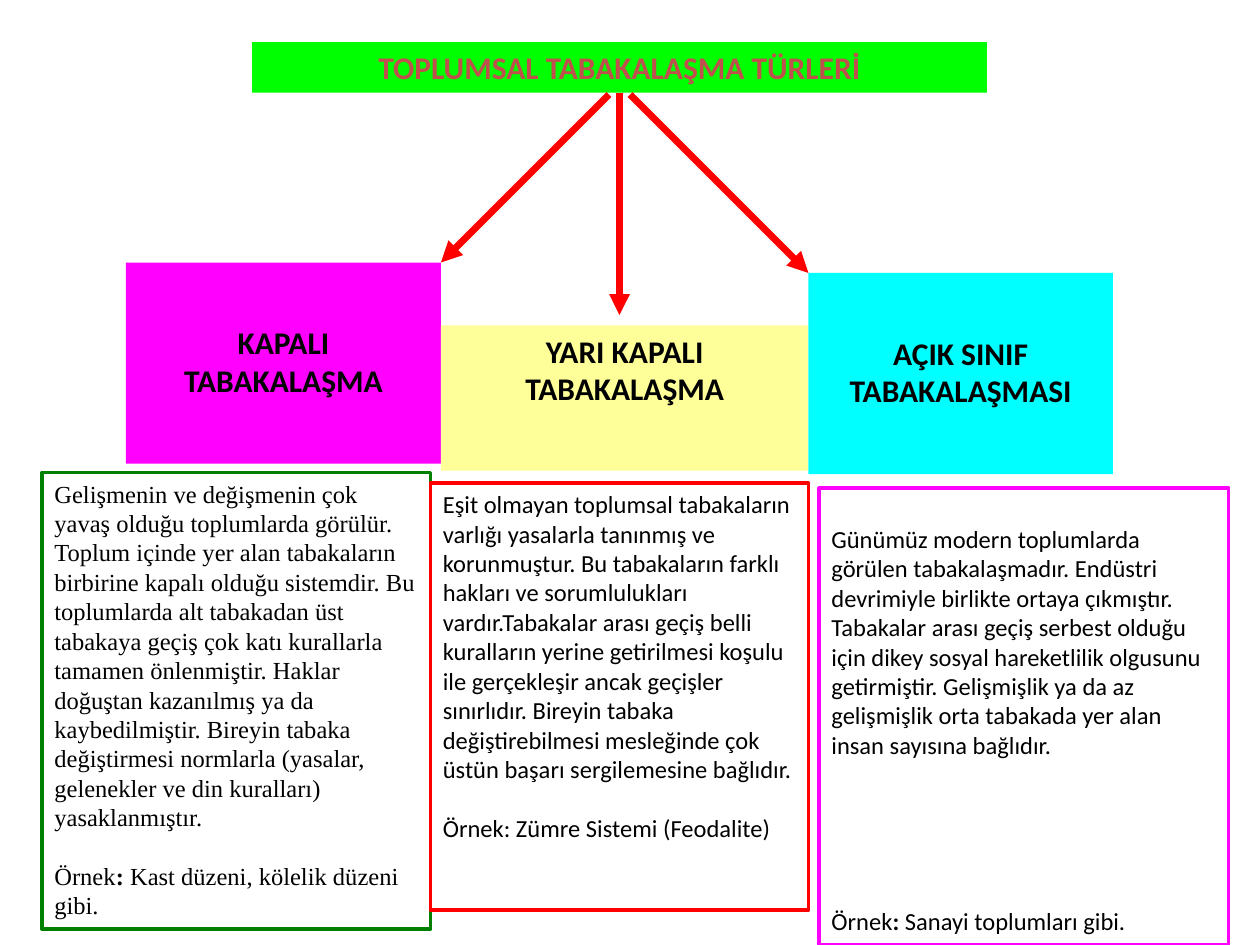
"""Builds a slide on the three types of social stratification."""
from lxml import etree
from pptx import Presentation
from pptx.dml.color import RGBColor
from pptx.enum import shapes, text
from pptx.oxml.ns import qn
from pptx.util import Pt


def color(code):
    return RGBColor.from_string(code)


def place(box, spot, top=3.6):
    box.left, box.top, box.width, box.height = [Pt(n) for n in spot]
    frame = box.text_frame
    frame.word_wrap = True
    frame.auto_size = text.MSO_AUTO_SIZE.NONE
    frame.vertical_anchor = text.MSO_ANCHOR.TOP
    frame.margin_left = frame.margin_right = Pt(7.2)
    frame.margin_top, frame.margin_bottom = Pt(top), Pt(3.6)
    return frame


deck = Presentation()
deck.slide_width, deck.slide_height = Pt(720), Pt(540)
slide = deck.slides.add_slide(deck.slide_layouts[5])
items = slide.shapes

title = items.title
title.fill.solid()
title.fill.fore_color.rgb = color("00FF00")
para = place(title, (144, 24, 420, 29)).paragraphs[0]
para.text = "TOPLUMSAL TABAKALAŞMA TÜRLERİ"
para.alignment = text.PP_ALIGN.CENTER
para.font.size, para.font.bold, para.font.name = Pt(18), True, "Calibri"
para.font.color.rgb = color("C0504D")

kinds = [
    ("KAPALI TABAKALAŞMA", (72, 150, 180, 115), 34.6, "FF00FF"),
    ("YARI KAPALI TABAKALAŞMA", (252, 186, 210, 83), 3.6, "FFFF99"),
    ("AÇIK SINIF TABAKALAŞMASI", (462, 156, 174, 115), 34.6, "00FFFF"),
]
for name, spot, top, fill in kinds:
    box = items.add_shape(shapes.MSO_SHAPE.RECTANGLE, 0, 0, 0, 0)
    box.shadow.inherit = False
    box.fill.solid()
    box.fill.fore_color.rgb = color(fill)
    box.line.fill.background()
    para = place(box, spot, top).paragraphs[0]
    para.text = name
    para.alignment = text.PP_ALIGN.CENTER
    para.font.size, para.font.bold, para.font.name = Pt(18), True, "Calibri"
    para.font.color.rgb = color("000000")

for start, end in [((348, 54), (252, 150)), ((360, 54), (462, 156)),
                   ((354, 53), (354, 180))]:
    arrow = items.add_connector(shapes.MSO_CONNECTOR.STRAIGHT,
                                *[Pt(n) for n in start + end])
    if start[0] == end[0]:
        arrow.begin_connect(title, 2)
    arrow.line.color.rgb = color("FF0000")
    arrow.line.width = Pt(4)
    etree.SubElement(arrow.line._get_or_add_ln(), qn("a:tailEnd"), type="triangle")
    etree.SubElement(arrow._element.spPr, qn("a:effectLst"))

row = 16.8
notes = [
    ((24, 270, 222, 261), 3.6, "008000", "Times New Roman", [
        (0, ["Gelişmenin ve değişmenin çok"]),
        (0, ["yavaş olduğu toplumlarda görülür. Toplum içinde yer alan "
             "tabakaların birbirine kapalı olduğu sistemdir. Bu toplumlarda "
             "alt tabakadan üst tabakaya geçiş çok katı kurallarla tamamen "
             "önlenmiştir. Haklar doğuştan kazanılmış ya da kaybedilmiştir. "
             "Bireyin tabaka değiştirmesi normlarla (yasalar, gelenekler ve "
             "din kuralları) yasaklanmıştır."]),
        (1, ["Örnek", ": ", "Kast düzeni, kölelik düzeni gibi."])]),
    ((246, 276, 216, 244), 3.6, "FF0000", "Calibri", [
        (0, ["Eşit olmayan toplumsal tabakaların varlığı yasalarla tanınmış "
             "ve korunmuştur. Bu tabakaların farklı hakları ve sorumlulukları "
             "vardır.Tabakalar arası geçiş belli kuralların yerine "
             "getirilmesi koşulu ile gerçekleşir ancak geçişler sınırlıdır. "
             "Bireyin tabaka değiştirebilmesi mesleğinde çok üstün başarı "
             "sergilemesine bağlıdır."]),
        (1, ["Örnek: Zümre Sistemi (Feodalite)"])]),
    ((468, 279, 234, 261), 3.6 + row, "FF00FF", "Calibri", [
        (0, ["Günümüz modern toplumlarda görülen tabakalaşmadır. Endüstri "
             "devrimiyle birlikte ortaya çıkmıştır. Tabakalar arası geçiş "
             "serbest olduğu için dikey sosyal hareketlilik olgusunu "
             "getirmiştir. Gelişmişlik ya da az gelişmişlik orta tabakada "
             "yer alan insan sayısına bağlıdır."]),
        (5, ["Örnek", ": ", "Sanayi toplumları gibi."])]),
]
for spot, top, edge, font, paras in notes:
    box = items.add_shape(shapes.MSO_SHAPE.RECTANGLE, 0, 0, 0, 0)
    box.shadow.inherit = False
    box.fill.background()
    box.line.color.rgb = color(edge)
    box.line.width = Pt(2)
    frame = place(box, spot, top)
    for i, (gap, parts) in enumerate(paras):
        para = frame.add_paragraph() if i else frame.paragraphs[0]
        para.alignment = text.PP_ALIGN.LEFT
        para.line_spacing = Pt(row)
        para.space_before = Pt(gap * row)
        para.font.size, para.font.name = Pt(14), font
        para.font.color.rgb = color("000000")
        for part in parts:
            run = para.add_run()
            run.text = part
            if part == ": ":
                run.font.bold = True

deck.save("out.pptx")
